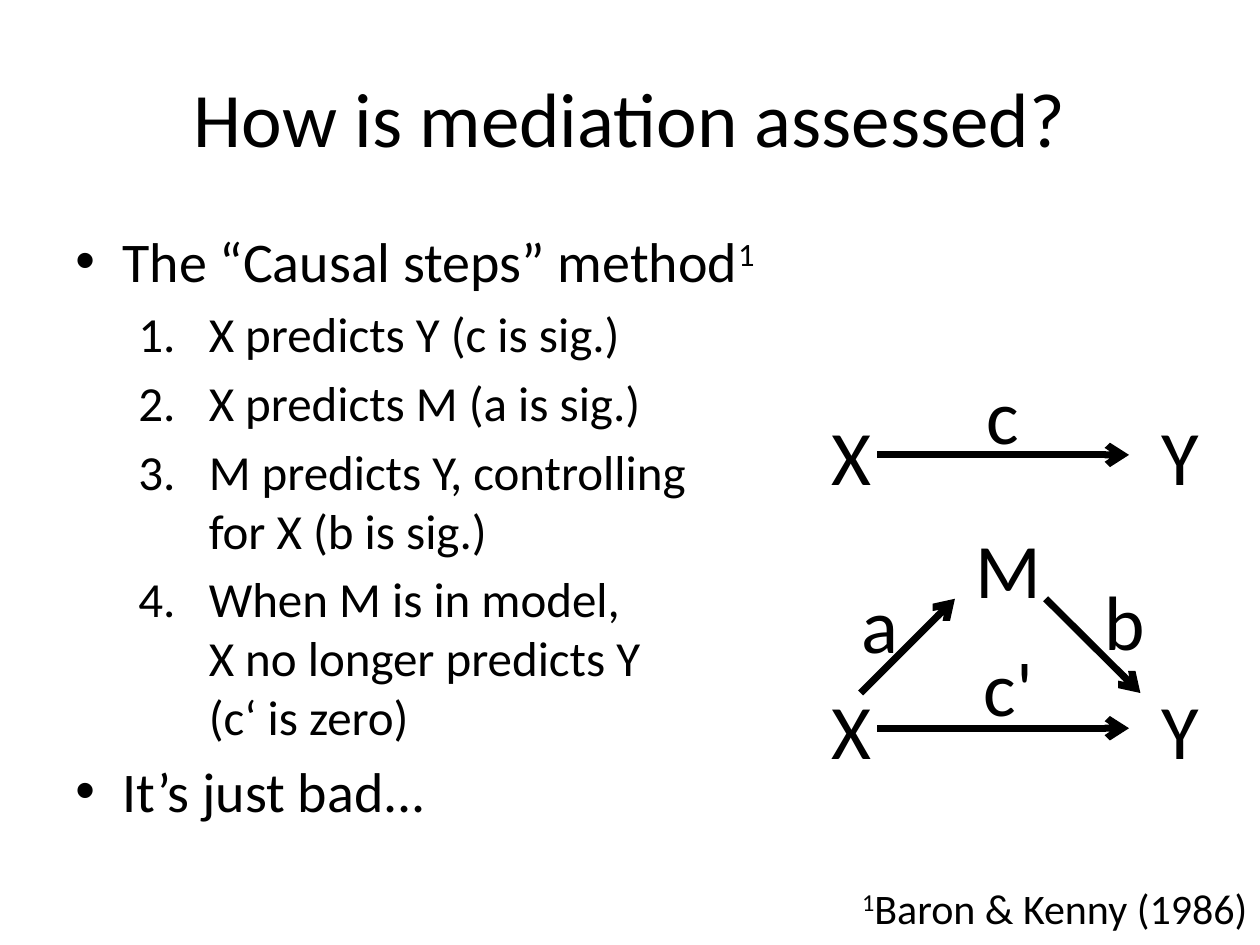
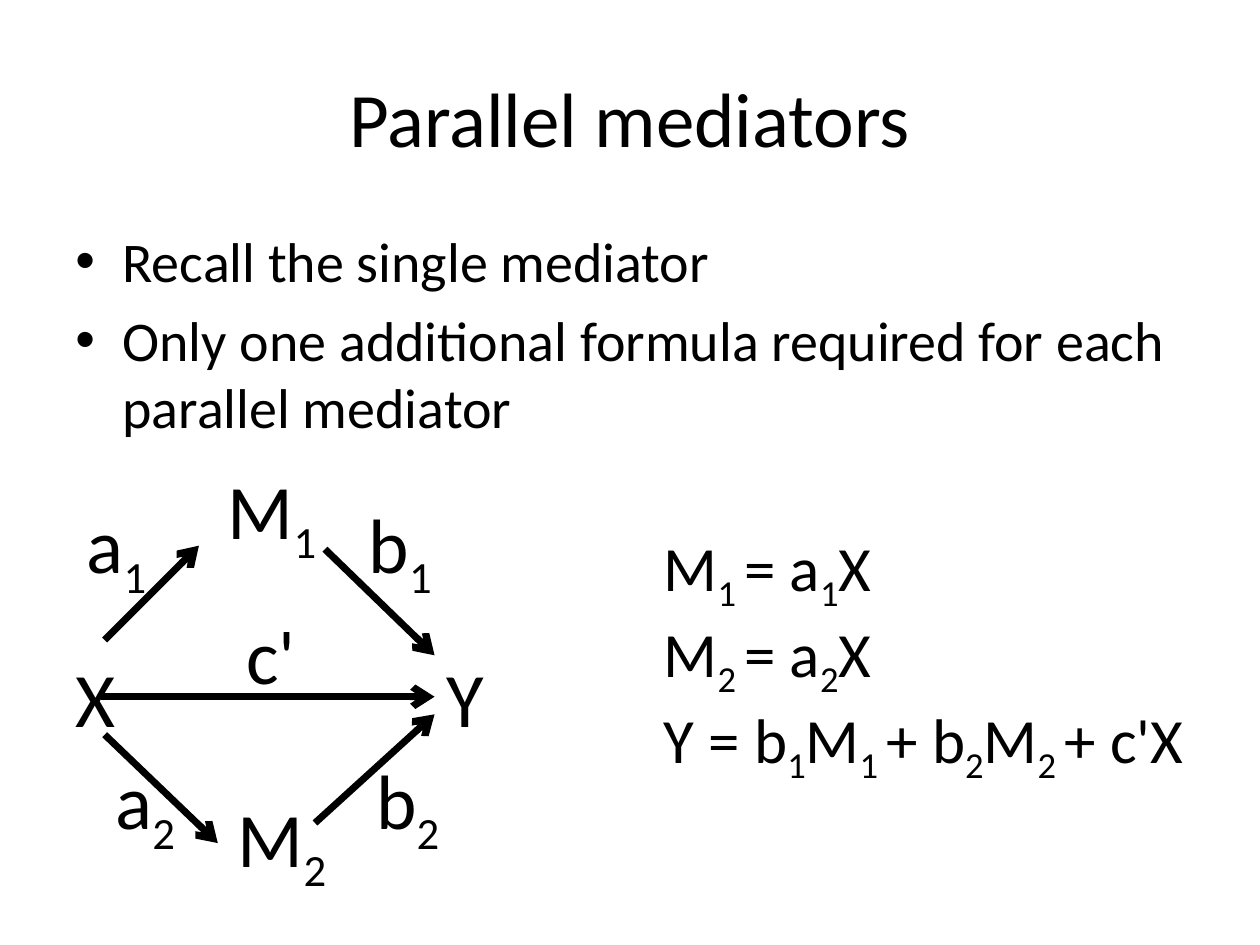
"""Build two slides on mediation: the causal steps method and parallel mediators."""
from lxml import etree
from pptx import Presentation
from pptx.dml.color import RGBColor
from pptx.enum.shapes import MSO_CONNECTOR
from pptx.enum.text import MSO_ANCHOR, MSO_AUTO_SIZE, PP_ALIGN
from pptx.oxml.ns import qn
from pptx.util import Cm, Pt

STRAIGHT = MSO_CONNECTOR.STRAIGHT
TOP, MIDDLE, BOTTOM = MSO_ANCHOR.TOP, MSO_ANCHOR.MIDDLE, MSO_ANCHOR.BOTTOM
LEFT, CENTER, RIGHT = PP_ALIGN.LEFT, PP_ALIGN.CENTER, PP_ALIGN.RIGHT
GROW = MSO_AUTO_SIZE.SHAPE_TO_FIT_TEXT

COLORS = {"background": "FFFFFF", "ink": "000000"}
FONT = "Calibri"
SUPERSCRIPT, SUBSCRIPT = 30, -25
LABEL_HEIGHT = 2.39
INSET = 0.25
LEFT_SIDE, RIGHT_SIDE = 1, 3
LEVELS = [
    {"size": 32, "left": 0.95, "hanging": 0.95, "tag": "a:buChar", "mark": ("char", "•")},
    {"size": 28, "left": 2.69, "hanging": 1.42, "tag": "a:buAutoNum", "mark": ("type", "arabicPeriod")},
]


def add_box(shapes, place, anchor, inset=None, grow=False):
    """Add an empty wrapping text box and return it."""
    shape = shapes.add_textbox(*[Cm(length) for length in place])
    frame = shape.text_frame
    frame.word_wrap = True
    frame.vertical_anchor = anchor
    if grow:
        frame.auto_size = GROW
    if inset:
        frame.margin_left = frame.margin_right = Cm(inset)
        frame.margin_top = frame.margin_bottom = Cm(inset)
    return shape


def add_paragraph(shape, parts, size, align=LEFT, shift=SUBSCRIPT, spaced=True):
    """Add a paragraph in which every second part is raised or lowered by shift."""
    frame = shape.text_frame
    first = frame.paragraphs[0]
    paragraph = frame.add_paragraph() if first.runs else first
    paragraph.alignment = align
    if spaced:
        before = etree.SubElement(paragraph._p.get_or_add_pPr(), qn("a:spcBef"))
        etree.SubElement(before, qn("a:spcPct")).set("val", "20000")
    for index, part in enumerate(parts):
        for line_number, line in enumerate(part.split("\n")):
            if line_number:
                paragraph.add_line_break()
            if not line:
                continue
            run = paragraph.add_run()
            run.text = line
            run.font.size = Pt(size)
            run.font.name = FONT
            run.font.color.rgb = RGBColor.from_string(COLORS["ink"])
            if index % 2:
                run.font._element.set("baseline", str(shift * 1000))
    return paragraph


SLIDES = [
    {
        "title": "How is mediation assessed?",
        "body": [
            (0, ["The “Causal steps” method", "1"]),
            (1, ["X predicts Y (c is sig.)"]),
            (1, ["X predicts M (a is sig.)"]),
            (1, ["M predicts Y, controlling\nfor X (b is sig.)"]),
            (1, ["When M is in model,\nX no longer predicts Y\n(c‘ is zero)"]),
            (0, ["It’s just bad..."]),
        ],
        "diagrams": [
            {
                "labels": [
                    (["c"], 19.43, 7.14, 1.57),
                    (["X"], 16.51, 7.98, 0.76),
                    (["Y"], 23.16, 7.98, 0.76),
                ],
                "arrows": [(17.68, 9.17, 22.76, 9.17)],
            },
            {
                "labels": [
                    (["c'"], 19.25, 12.62, 2.16),
                    (["X"], 16.51, 13.49, 0.76),
                    (["Y"], 23.16, 13.49, 0.76),
                    (["M"], 19.41, 10.24, 1.6),
                    (["a"], 16.66, 11.35, 2.16),
                    (["b"], 21.59, 11.3, 2.16),
                ],
                "arrows": [
                    (17.68, 14.68, 22.76, 14.68),
                    (17.35, 13.97, 19.25, 12.07),
                    (21.08, 12.07, 22.99, 13.97),
                ],
            },
        ],
        "formulas": [],
        "footnote": ["", "1", "Baron & Kenny (1986)"],
    },
    {
        "title": "Parallel mediators",
        "body": [
            (0, ["Recall the single mediator"]),
            (0, ["Only one additional formula required for each parallel mediator"]),
        ],
        "diagrams": [
            {
                "labels": [
                    (["c'"], 4.39, 11.99, 2.16),
                    (["X"], 1.27, 12.85, 0.76),
                    (["Y"], 8.76, 12.85, 0.76),
                    (["M", "1"], 4.19, 9.19, 2.59),
                    (["a", "1"], 1.27, 9.88, 2.16),
                    (["b", "1"], 6.99, 9.88, 2.16),
                    (["M", "2"], 4.39, 15.8, 2.59),
                    (["a", "2"], 1.85, 15.04, 2.16),
                    (["b", "2"], 7.14, 15.04, 2.16),
                ],
                "arrows": [
                    (2.03, 14.05, 8.76, 14.05, "X", "Y"),
                    (2.11, 12.9, 4.01, 11),
                    (6.55, 11.07, 8.76, 13.21),
                    (2.11, 14.81, 4.39, 17, None, "M2"),
                    (6.35, 16.59, 8.76, 14.4),
                ],
            },
        ],
        "formulas": [
            ["M", "1 ", "= a", "1", "X"],
            ["M", "2 ", "= a", "2", "X"],
            ["Y = b", "1", "M", "1 ", "+ b", "2", "M", "2 ", "+ c'X"],
        ],
        "footnote": [],
    },
]

presentation = Presentation()
presentation.slide_width, presentation.slide_height = Cm(25.4), Cm(19.05)

for content in SLIDES:
    slide = presentation.slides.add_slide(presentation.slide_layouts[6])
    slide.background.fill.solid()
    slide.background.fill.fore_color.rgb = RGBColor.from_string(COLORS["background"])

    title = add_box(slide.shapes, (1.27, 0.76, 22.86, 3.18), MIDDLE)
    add_paragraph(title, [content["title"]], 44, CENTER, spaced=False)

    body = add_box(slide.shapes, (1.27, 4.45, 22.86, 12.57), TOP)
    for level, parts in content["body"]:
        style = LEVELS[level]
        paragraph = add_paragraph(body, parts, style["size"], shift=SUPERSCRIPT)
        paragraph.level = level
        properties = paragraph._p.get_or_add_pPr()
        properties.set("marL", str(Cm(style["left"])))
        properties.set("indent", str(-Cm(style["hanging"])))
        etree.SubElement(properties, qn("a:buFont")).set("typeface", "Arial")
        etree.SubElement(properties, qn(style["tag"])).set(*style["mark"])

    if content["formulas"]:
        formulas = add_box(slide.shapes, (13.13, 10.52, 11.63, 4.88), TOP, grow=True)
        for parts in content["formulas"]:
            add_paragraph(formulas, parts, 36, spaced=False)

    for diagram in content["diagrams"]:
        group = slide.shapes.add_group_shape()
        labels = {}
        for parts, left, top, width in diagram["labels"]:
            label = add_box(group.shapes, (left, top, width, LABEL_HEIGHT), MIDDLE, INSET, True)
            add_paragraph(label, parts, 44, CENTER)
            labels["".join(parts)] = label
        for *ends, in_order in [(*arrow[:4], arrow[4:]) for arrow in diagram["arrows"]]:
            source, target = in_order or (None, None)
            connector = group.shapes.add_connector(STRAIGHT, *[Cm(end) for end in ends])
            connector.line.width = Pt(4)
            connector.line.color.rgb = RGBColor.from_string(COLORS["ink"])
            properties = connector.element.spPr
            etree.SubElement(properties.find(qn("a:ln")), qn("a:tailEnd")).set("type", "arrow")
            etree.SubElement(properties, qn("a:effectLst"))
            if source:
                connector.begin_connect(labels[source], RIGHT_SIDE)
            if target:
                connector.end_connect(labels[target], LEFT_SIDE)

    if content["footnote"]:
        footnote = add_box(slide.shapes, (15.04, 17.5, 10.36, 1.55), BOTTOM, INSET, True)
        add_paragraph(footnote, content["footnote"], 24, RIGHT, SUPERSCRIPT)

presentation.save("out.pptx")
